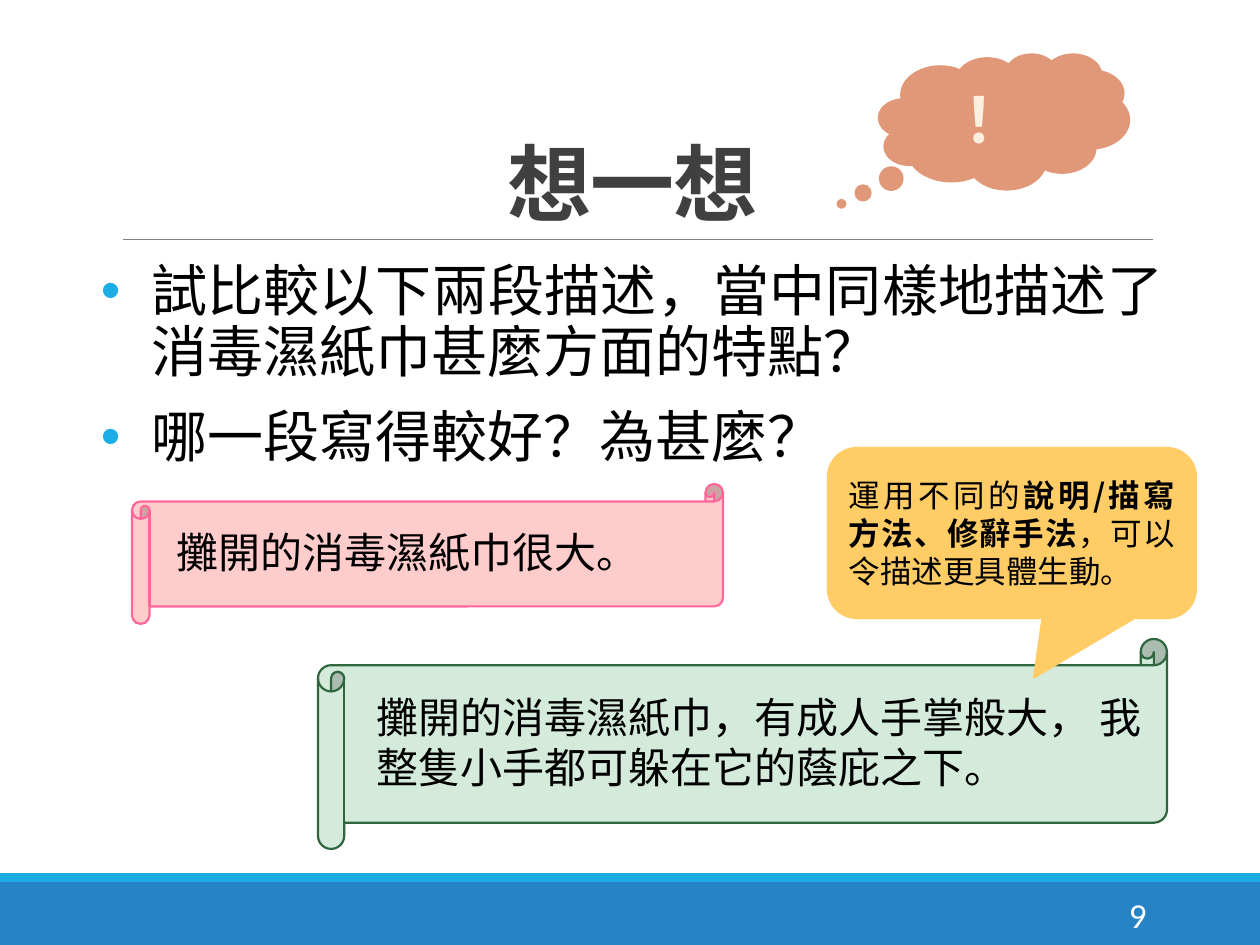
from lxml.etree import SubElement
from pptx import Presentation
from pptx.dml.color import RGBColor
from pptx.enum.shapes import MSO_CONNECTOR, MSO_SHAPE
from pptx.enum.text import MSO_ANCHOR, MSO_AUTO_SIZE, PP_ALIGN
from pptx.oxml.ns import qn
from pptx.util import Emu, Pt

SCALE = 914400 / 126
CJK = "Noto Sans CJK SC"

TITLE = "想一想"
QUESTIONS = [
    "試比較以下兩段描述，當中同樣地描述了消毒濕紙巾甚麼方面的特點？",
    "哪一段寫得較好？為甚麼？",
]
HINT = [("運用不同的", False), ("說明/描寫方法、修辭手法", True), ("，可以令描述更具體生動。", False)]
FOOTER_BANDS = [((0, 882, 1260, 63), "2683C6"), ((0, 873, 1260, 9), "1CADE4")]
# scroll box, fill, line, text box, text
SCROLLS = [
    ((132, 484, 591, 140), "FFCCCC", "FF6699", (164, 520, 799, 63), "攤開的消毒濕紙巾很大。"),
    ((318, 639, 849, 210), "D4EBDB", "2F663E", (364, 685, 799, 115),
     "攤開的消毒濕紙巾，有成人手掌般大， 我整隻小手都可躲在它的蔭庇之下。"),
]


def px(value):
    return Emu(round(value * SCALE))


def color(value):
    return RGBColor.from_string(value)


def place(shape, box):
    shape.left, shape.top, shape.width, shape.height = map(px, box)


def add_text(paragraph, text, size, font=CJK, fill="000000", bold=False, spacing=None, align=PP_ALIGN.LEFT):
    paragraph.alignment = align
    run = paragraph.add_run()
    run.text = text
    run.font.size = Pt(size)
    run.font.name = font
    run.font.bold = bold
    run.font.color.rgb = color(fill)
    properties = run.font._element
    properties.find(qn("a:latin")).addnext(properties.makeelement(qn("a:ea"), {"typeface": font}))
    if spacing is not None:
        properties.set("spc", str(round(spacing * 100)))


def add_bullet(paragraph, character, fill, indent):
    properties = paragraph._p.get_or_add_pPr()
    properties.set("marL", str(px(indent)))
    properties.set("indent", str(-px(indent)))
    bullet_color = SubElement(properties, qn("a:buClr"))
    SubElement(bullet_color, qn("a:srgbClr"), val=fill)
    SubElement(properties, qn("a:buFont"), typeface="Arial")
    SubElement(properties, qn("a:buChar"), char=character)


def add_shape(slide, kind, box, fill, line=None, adjustments=()):
    shape = slide.shapes.add_shape(kind, *map(px, box))
    shape.shadow.inherit = False
    shape.fill.solid()
    shape.fill.fore_color.rgb = color(fill)
    if line:
        shape.line.color.rgb = color(line)
        shape.line.width = Pt(1.25)
    else:
        shape.line.fill.background()
    for index, value in enumerate(adjustments):
        shape.adjustments[index] = value
    shape.text_frame.word_wrap = True
    shape.text_frame.vertical_anchor = MSO_ANCHOR.MIDDLE
    return shape


def add_text_box(slide, box, text, size, anchor=MSO_ANCHOR.TOP, **text_format):
    frame = slide.shapes.add_textbox(*map(px, box)).text_frame
    frame.word_wrap = True
    frame.vertical_anchor = anchor
    add_text(frame.paragraphs[0], text, size, **text_format)


def add_rule(slide, left, right, y):
    rule = slide.shapes.add_connector(MSO_CONNECTOR.STRAIGHT, px(left), px(y), px(right), px(y))
    rule.line.color.rgb = color("808080")
    rule.line.width = Pt(0.5)
    SubElement(rule._element.spPr, qn("a:effectLst"))


def fill_title(title):
    place(title, (113, 39, 1040, 200))
    frame = title.text_frame
    frame.auto_size = MSO_AUTO_SIZE.NONE
    frame.vertical_anchor = MSO_ANCHOR.BOTTOM
    paragraph = frame.paragraphs[0]
    paragraph.line_spacing = 0.85
    add_text(paragraph, TITLE, 48, fill="404040", bold=True, spacing=-0.5, align=PP_ALIGN.CENTER)


def fill_questions(body):
    place(body, (101, 257, 1063, 554))
    frame = body.text_frame
    frame.auto_size = MSO_AUTO_SIZE.NONE
    frame.vertical_anchor = MSO_ANCHOR.TOP
    frame.margin_left = frame.margin_right = 0
    for index, question in enumerate(QUESTIONS):
        paragraph = frame.add_paragraph() if index else frame.paragraphs[0]
        add_bullet(paragraph, "•", "1CADE4", 50)
        paragraph.line_spacing = 0.9
        paragraph.space_before = Pt(12)
        paragraph.space_after = Pt(2)
        add_text(paragraph, question, 32, align=PP_ALIGN.JUSTIFY)


def main():
    presentation = Presentation()
    presentation.slide_width, presentation.slide_height = px(1260), px(945)
    slide = presentation.slides.add_slide(presentation.slide_layouts[1])

    for box, fill in FOOTER_BANDS:
        add_shape(slide, MSO_SHAPE.RECTANGLE, box, fill)
    add_rule(slide, 123, 1153, 239)
    fill_title(slide.shapes.title)
    fill_questions(slide.placeholders[1])
    add_text_box(slide, (1023, 890, 136, 50), "9", 20, anchor=MSO_ANCHOR.MIDDLE,
                 font="Calibri", fill="FFFFFF", align=PP_ALIGN.RIGHT)

    cloud = add_shape(slide, MSO_SHAPE.CLOUD_CALLOUT, (879, 54, 250, 135), "E09878", "E09878", (-0.65, 0.61))
    add_text(cloud.text_frame.paragraphs[0], "！", 36, fill="FCEFE0", bold=True, align=PP_ALIGN.CENTER)

    for box, fill, line, _, _ in SCROLLS:
        add_shape(slide, MSO_SHAPE.HORIZONTAL_SCROLL, box, fill, line)
    for _, _, _, box, text in SCROLLS:
        add_text_box(slide, box, text, 24)

    callout = add_shape(slide, MSO_SHAPE.ROUNDED_RECTANGULAR_CALLOUT, (828, 448, 368, 170),
                        "FFCC66", "FFCC66", (0.06, 0.85, 0.17))
    for text, bold in HINT:
        add_text(callout.text_frame.paragraphs[0], text, 18, bold=bold, align=PP_ALIGN.JUSTIFY)

    presentation.save("out.pptx")


if __name__ == "__main__":
    main()
